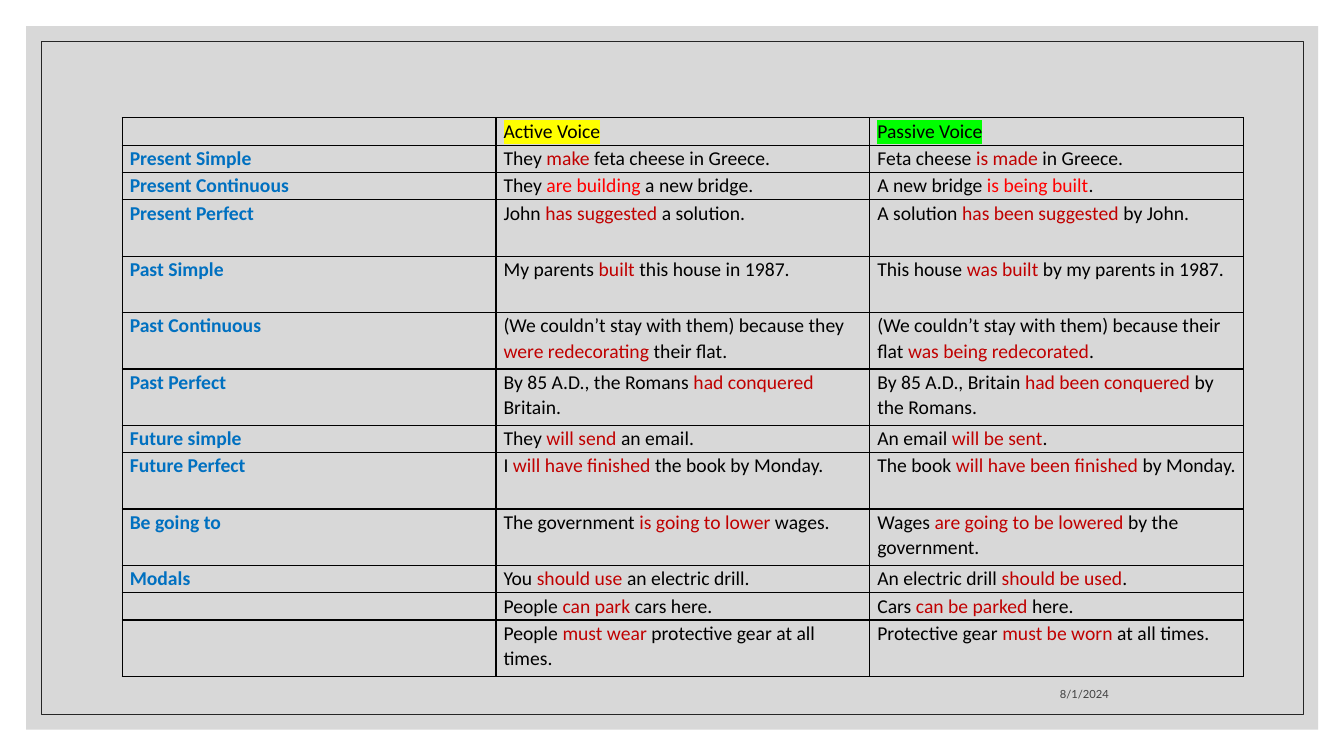
from dataclasses import dataclass
from typing import Optional

from lxml.etree import SubElement
from pptx import Presentation
from pptx.dml.color import RGBColor
from pptx.enum.shapes import MSO_SHAPE as Preset
from pptx.enum.text import MSO_ANCHOR as Anchor, PP_ALIGN as Align
from pptx.oxml.ns import qn
from pptx.shapes.autoshape import Shape
from pptx.slide import Slide
from pptx.table import Table, _Cell as Cell
from pptx.util import Cm, Pt


@dataclass(frozen=True)
class Theme:
    panel: str = "BFBFBF"
    panel_opacity: int = 60
    frame: str = "262626"
    text: str = "000000"
    tense: str = "0070C0"
    verb: str = "C00000"
    bright_verb: str = "FF0000"
    active_highlight: str = "FFFF00"
    passive_highlight: str = "00FF00"
    date: str = "404040"
    table_font: str = "Calibri"
    date_font: str = "Lato"
    table_size: int = 14
    date_size: int = 8


THEME = Theme()


@dataclass(frozen=True)
class TenseRow:
    """Bars in a sentence set off its verb."""
    tense: str
    active: str
    passive: str
    tall: bool = False
    verb_color: str = THEME.verb


TENSE_ROWS = [
    TenseRow("Present Simple", "They |make |feta cheese in Greece.",
             "Feta cheese |is made |in Greece."),
    TenseRow("Present Continuous", "They |are building| a new bridge.",
             "A new bridge |is being built|.", verb_color=THEME.bright_verb),
    TenseRow("Present Perfect", "John |has suggested |a solution.",
             "A solution |has been suggested| by John.", tall=True),
    TenseRow("Past Simple", "My parents |built |this house in 1987.",
             "This house |was built |by my parents in 1987.", tall=True),
    TenseRow("Past Continuous",
             "(We couldn’t stay with them) because they |were redecorating |their flat.",
             "(We couldn’t stay with them) because their flat |was being redecorated|.",
             tall=True),
    TenseRow("Past Perfect", "By 85 A.D., the Romans |had conquered |Britain.",
             "By 85 A.D., Britain |had been conquered| by the Romans.", tall=True),
    TenseRow("Future simple", "They |will send |an email.",
             "An email |will be sent|."),
    TenseRow("Future Perfect", "I |will have finished |the book by Monday.",
             "The book |will have been finished| by Monday.", tall=True),
    TenseRow("Be going to", "The government |is going to lower |wages.",
             "Wages |are going to be lowered |by the government.", tall=True),
    TenseRow("Modals", "You |should use |an electric drill.",
             "An electric drill |should be used|."),
    TenseRow("", "People |can park |cars here.", "Cars |can be parked |here."),
    TenseRow("", "People |must wear |protective gear at all times.",
             "Protective gear |must be worn |at all times.", tall=True),
]

COLUMN_WIDTH = Cm(9.42)
ROW_HEIGHT = Cm(0.69)
TALL_ROW_HEIGHT = Cm(1.42)


def rgb(color: str) -> RGBColor:
    return RGBColor.from_string(color)


def add_rectangle(slide: Slide, left: Cm, top: Cm, width: Cm, height: Cm) -> Shape:
    shape = slide.shapes.add_shape(Preset.RECTANGLE, left, top, width, height)
    shape.shadow.inherit = False
    return shape


def add_backdrop(slide: Slide) -> None:
    panel = add_rectangle(slide, Cm(0.66), Cm(0.66), Cm(32.56), Cm(17.73))
    panel.fill.solid()
    panel.fill.fore_color.rgb = rgb(THEME.panel)
    panel.line.fill.background()
    color = panel._element.spPr.find(qn("a:solidFill"))[0]
    SubElement(color, qn("a:alpha"), val=str(THEME.panel_opacity * 1000))

    frame = add_rectangle(slide, Cm(1.04), Cm(1.04), Cm(31.8), Cm(16.97))
    frame.fill.background()
    frame.line.color.rgb = rgb(THEME.frame)
    frame.line.width = Pt(0.5)


def add_borders(cell: Cell) -> None:
    properties = cell._tc.get_or_add_tcPr()
    for side in ("a:lnL", "a:lnR", "a:lnT", "a:lnB"):
        line = SubElement(properties, qn(side), w=str(Pt(1)))
        fill = SubElement(line, qn("a:solidFill"))
        SubElement(fill, qn("a:srgbClr"), val=THEME.text)


def write_cell(cell: Cell, text: str, color: str = THEME.text, bold: bool = False,
               verb_color: str = THEME.verb, highlight: Optional[str] = None) -> None:
    add_borders(cell)
    cell.fill.background()
    cell.margin_left = cell.margin_right = Cm(0.19)
    cell.margin_top = cell.margin_bottom = 0
    paragraph = cell.text_frame.paragraphs[0]
    paragraph.line_spacing = 1.07
    paragraph.space_after = Pt(8)
    paragraph.font.name = THEME.table_font
    paragraph.font.size = Pt(THEME.table_size)
    paragraph.font.bold = bold
    paragraph.font.color.rgb = rgb(color)
    if not text:
        end = paragraph._p.get_or_add_endParaRPr()
        end.set("sz", str(THEME.table_size * 100))
        return
    for index, part in enumerate(text.split("|")):
        run = paragraph.add_run()
        run.text = part
        if index == 1:
            run.font.color.rgb = rgb(verb_color)
        if highlight:
            mark = SubElement(run._r.get_or_add_rPr(), qn("a:highlight"))
            SubElement(mark, qn("a:srgbClr"), val=highlight)


def add_voice_table(slide: Slide) -> Table:
    heights = [ROW_HEIGHT] + [TALL_ROW_HEIGHT if row.tall else ROW_HEIGHT
                              for row in TENSE_ROWS]
    table = slide.shapes.add_table(len(heights), 3, Cm(3.08), Cm(2.97),
                                   COLUMN_WIDTH * 3, sum(heights)).table
    table.first_row = table.horz_banding = False
    for column in table.columns:
        column.width = COLUMN_WIDTH
    for table_row, height in zip(table.rows, heights):
        table_row.height = height

    write_cell(table.cell(0, 0), "")
    write_cell(table.cell(0, 1), "Active Voice", highlight=THEME.active_highlight)
    write_cell(table.cell(0, 2), "Passive Voice", highlight=THEME.passive_highlight)
    for index, row in enumerate(TENSE_ROWS, start=1):
        write_cell(table.cell(index, 0), row.tense, THEME.tense, bold=True)
        for column, sentence in enumerate((row.active, row.passive), start=1):
            write_cell(table.cell(index, column), sentence, verb_color=row.verb_color)
    return table


def add_date(slide: Slide) -> None:
    text_frame = slide.shapes.add_textbox(Cm(20.17), Cm(16.76), Cm(8.03), Cm(1.02)).text_frame
    text_frame.word_wrap = True
    text_frame.vertical_anchor = Anchor.BOTTOM
    paragraph = text_frame.paragraphs[0]
    paragraph.text = "8/1/2024"
    paragraph.alignment = Align.RIGHT
    paragraph.font.name = THEME.date_font
    paragraph.font.size = Pt(THEME.date_size)
    paragraph.font.color.rgb = rgb(THEME.date)


def main() -> None:
    presentation = Presentation()
    presentation.slide_width = Cm(33.87)
    presentation.slide_height = Cm(19.05)
    slide = presentation.slides.add_slide(presentation.slide_layouts[6])
    add_backdrop(slide)
    add_voice_table(slide)
    add_date(slide)
    presentation.save("out.pptx")


if __name__ == "__main__":
    main()
